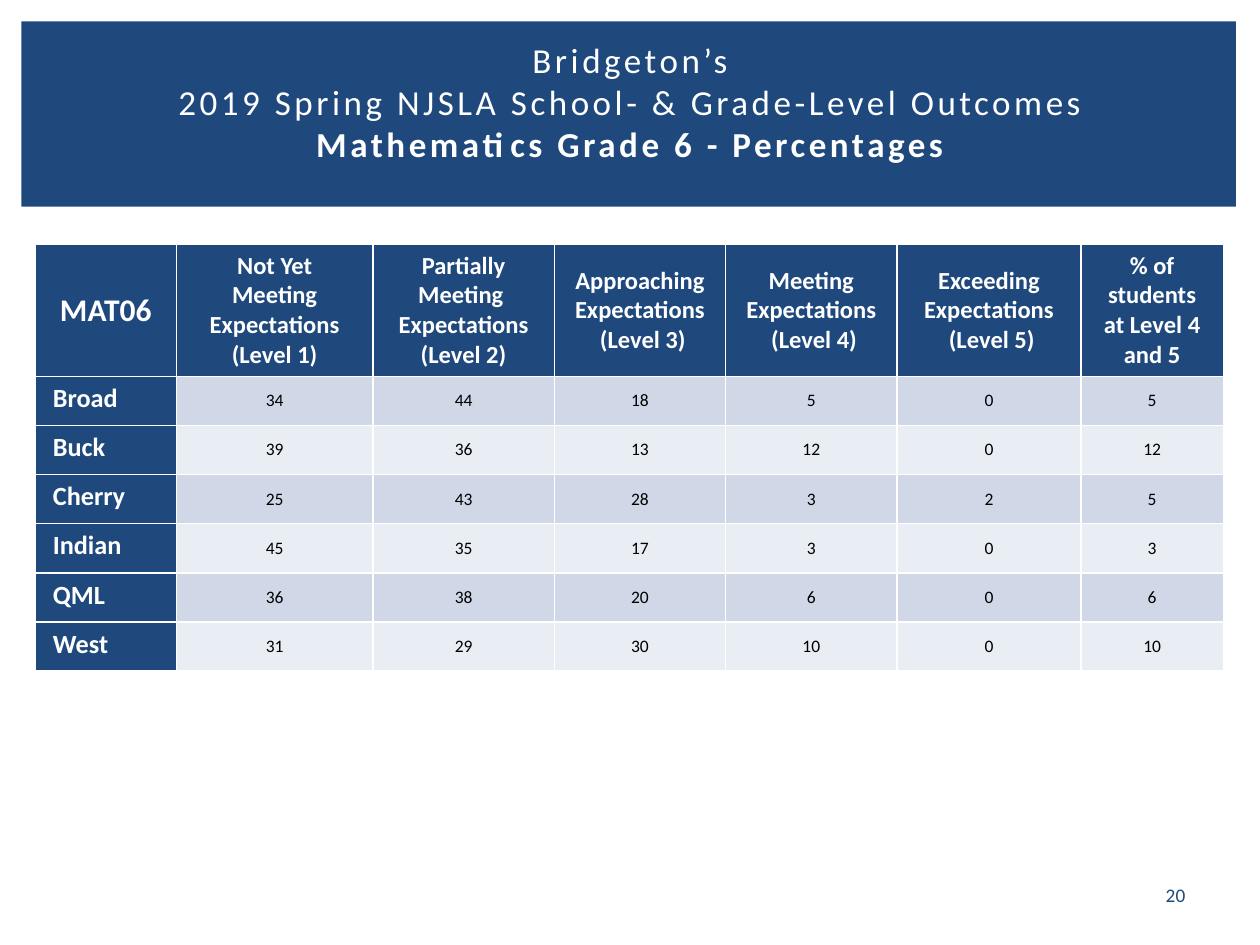
from pptx import Presentation
from pptx import util as u
from pptx.dml.color import RGBColor
from pptx.enum import shapes, text

NAVY = RGBColor(0x1F, 0x49, 0x7D)
WHITE = RGBColor(0xFF, 0xFF, 0xFF)
BLACK = RGBColor(0, 0, 0)
BANDS = RGBColor(0xD0, 0xD8, 0xE8), RGBColor(0xE9, 0xED, 0xF4)
MID = text.MSO_ANCHOR.MIDDLE
CENTER = text.PP_ALIGN.CENTER
LEFT = text.PP_ALIGN.LEFT

TITLE = [
    ("Bridgeton’s", False),
    ("2019 Spring NJSLA School- & Grade-Level Outcomes", False),
    ("Mathematics Grade 6 - Percentages", True),
]
HEADS = [
    "MAT06",
    "Not Yet Meeting Expectations\n(Level 1)",
    "Partially Meeting \nExpectations\n(Level 2)",
    "Approaching Expectations\n (Level 3)",
    "Meeting Expectations\n (Level 4)",
    "Exceeding Expectations\n (Level 5)",
    "% of students at Level 4 and 5",
]
SCORES = [
    ("Broad", 34, 44, 18, 5, 0, 5),
    ("Buck", 39, 36, 13, 12, 0, 12),
    ("Cherry", 25, 43, 28, 3, 2, 5),
    ("Indian", 45, 35, 17, 3, 0, 3),
    ("QML", 36, 38, 20, 6, 0, 6),
    ("West", 31, 29, 30, 10, 0, 10),
]
COLS = [1.12, 1.56, 1.44, 1.36, 1.36, 1.46, 1.13]
HEAD_ROW, BODY_ROW = 1.04, 0.39


def assign(target, **values):
    for name, value in values.items():
        setattr(target, name, value)


def write(para, words, size, color, bold=False, align=CENTER):
    para.alignment = align
    run = para.add_run()
    run.text = words
    assign(run.font, name="Calibri", size=u.Pt(size), bold=bold)
    run.font.color.rgb = color
    return run


def place(shape, box):
    names = ("left", "top", "width", "height")
    assign(shape, **dict(zip(names, map(u.Inches, box))))


def header(slide, box):
    x, y, w, h = box
    band = slide.shapes.add_shape(shapes.MSO_SHAPE.RECTANGLE, *map(u.Inches, box))
    band.shadow.inherit = False
    band.fill.solid()
    band.fill.fore_color.rgb = NAVY
    band.line.fill.background()
    title = slide.shapes.title
    band._element.addnext(title._element)
    place(title, (x + 0.11, y + 0.15 * h, w - 0.2, 0.78 * h))
    frame = title.text_frame
    assign(frame, word_wrap=True, vertical_anchor=MID,
           auto_size=text.MSO_AUTO_SIZE.NONE, margin_bottom=u.Inches(0.36))
    for i, (words, bold) in enumerate(TITLE):
        para = frame.add_paragraph() if i else frame.paragraphs[0]
        run = write(para, words, 20, WHITE, bold)
        run.font._element.set("spc", "200")


def fill_cell(cell, words, fill, size, color, bold, align, anchor):
    side, edge = u.Inches(0.14), u.Inches(0.05)
    assign(cell, margin_left=side, margin_right=side, margin_top=edge,
           margin_bottom=edge, vertical_anchor=anchor)
    cell.fill.solid()
    cell.fill.fore_color.rgb = fill
    for i, line in enumerate(words.split("\n")):
        frame = cell.text_frame
        para = frame.add_paragraph() if i else frame.paragraphs[0]
        write(para, line, size, color, bold, align)


def table(slide, box):
    rows = [HEADS] + SCORES
    grid = slide.shapes.add_table(len(rows), len(COLS), *map(u.Inches, box)).table
    for col, width in zip(grid.columns, COLS):
        col.width = u.Inches(width)
    for r, row in enumerate(rows):
        grid.rows[r].height = u.Inches(BODY_ROW if r else HEAD_ROW)
        for c, value in enumerate(row):
            if r == 0:
                look = NAVY, 14 if c else 18, WHITE, True, CENTER, MID
            elif c == 0:
                look = NAVY, 15, WHITE, True, LEFT, text.MSO_ANCHOR.TOP
            else:
                look = BANDS[(r - 1) % 2], 10, BLACK, False, CENTER, MID
            fill_cell(grid.cell(r, c), str(value), *look)


def footer(slide, box):
    frame = slide.shapes.add_textbox(*map(u.Inches, box)).text_frame
    assign(frame, word_wrap=True, vertical_anchor=MID)
    write(frame.paragraphs[0], "20", 11, NAVY)


def main():
    deck = Presentation()
    assign(deck, slide_width=u.Inches(10), slide_height=u.Inches(7.5))
    slide = deck.slides.add_slide(deck.slide_layouts[5])
    header(slide, (0.17, 0.17, 9.64, 1.47))
    table(slide, (0.28, 1.94, sum(COLS), HEAD_ROW + BODY_ROW * len(SCORES)))
    footer(slide, (9.01, 6.95, 0.64, 0.3))
    deck.save("out.pptx")


if __name__ == "__main__":
    main()
